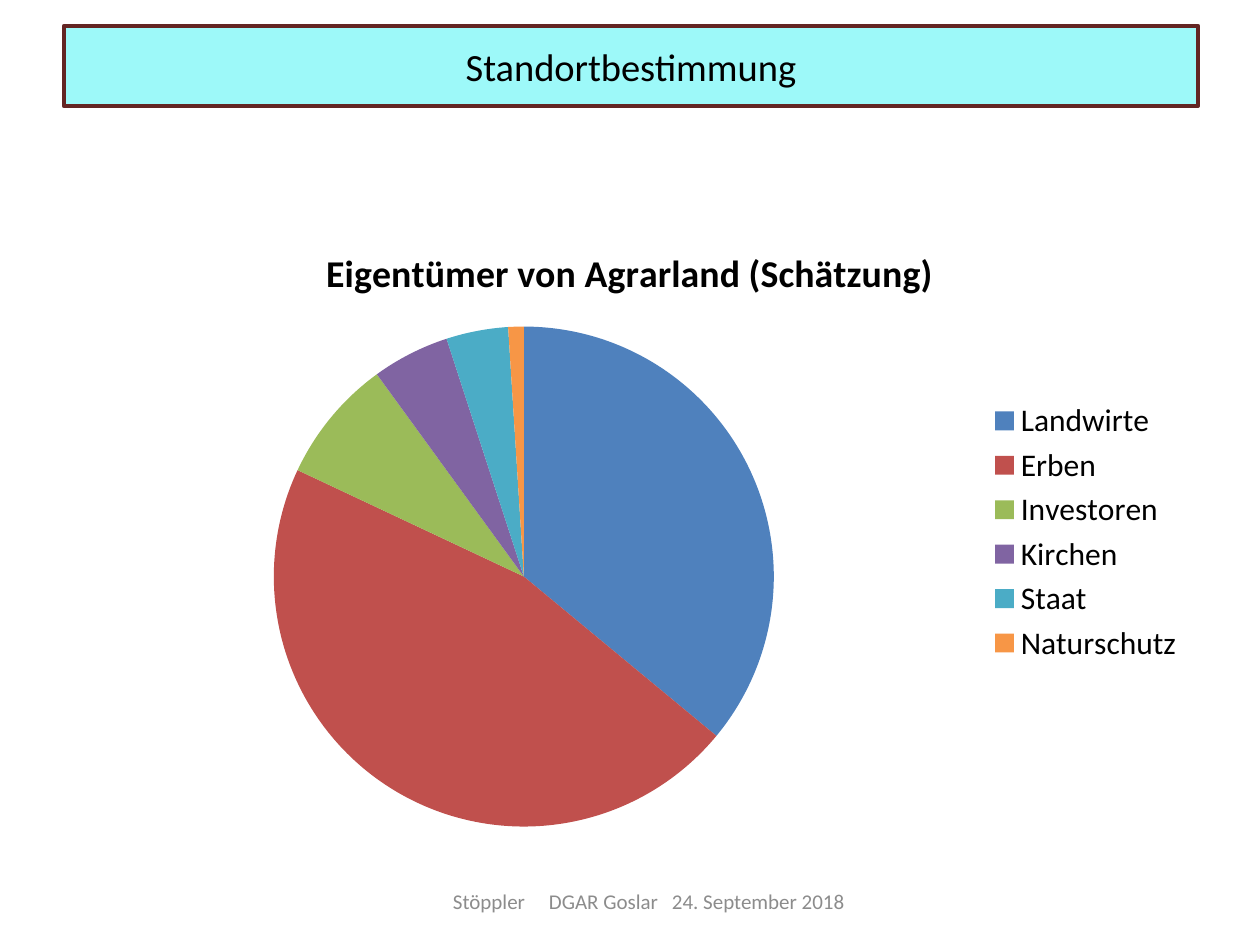
import pptx
import pptx.util
import pptx.chart.data
import pptx.dml.color
import pptx.enum.chart
import pptx.enum.text
import pptx.oxml
import pptx.oxml.ns

PX = 914400 // 126
FONT = "Calibri"
COLORS = {
    "title_fill": "9DF9F9", "title_line": "632523", "text": "000000", "footer": "8C8C8C",
    "Landwirte": "4F81BD", "Erben": "C0504D", "Investoren": "9BBB59",
    "Kirchen": "8064A2", "Staat": "4BACC6", "Naturschutz": "F79646",
}
OWNERS = {"Landwirte": 36, "Erben": 46, "Investoren": 8,
          "Kirchen": 5, "Staat": 4, "Naturschutz": 1}
CHART_TITLE = "Eigentümer von Agrarland (Schätzung)"


def box(*lengths):
    return [n * PX for n in lengths]


def style(font, size, color, bold=False):
    font.name = FONT
    font.size = pptx.util.Pt(size)
    font.bold = bold
    font.color.rgb = pptx.dml.color.RGBColor.from_string(COLORS[color])


prs = pptx.Presentation()
prs.slide_width, prs.slide_height = box(1260, 945)
s = prs.slides.add_slide(prs.slide_layouts[5])

data = pptx.chart.data.CategoryChartData()
data.categories = list(OWNERS)
data.add_series(CHART_TITLE, list(OWNERS.values()))
chart = s.shapes.add_chart(pptx.enum.chart.XL_CHART_TYPE.PIE,
                           *box(63, 220, 1134, 624), data).chart
style(chart.font, 18, "text")
chart.has_title = True
tf = chart.chart_title.text_frame
tf.text = CHART_TITLE
style(tf.paragraphs[0].font, 21.6, "text", True)
chart.has_legend = True
chart.legend.position = pptx.enum.chart.XL_LEGEND_POSITION.RIGHT
chart.legend.include_in_layout = False
plot = chart.plots[0]
plot.vary_by_categories = True
for i, owner in enumerate(OWNERS):
    fill = plot.series[0].points[i].format.fill
    fill.solid()
    fill.fore_color.rgb = pptx.dml.color.RGBColor.from_string(COLORS[owner])

footer = s.shapes.add_textbox(*box(431, 876, 437, 50))
tf = footer.text_frame
tf.word_wrap = True
tf.vertical_anchor = pptx.enum.text.MSO_ANCHOR.MIDDLE
tf.margin_left, tf.margin_right = box(22, 0)
p = tf.paragraphs[0]
r = p.add_run()
r.text = "Stöppler\tDGAR Goslar\t24. September 2018"
style(p.font, 12, "footer")
tabs = pptx.oxml.parse_xml(f'<a:tabLst {pptx.oxml.ns.nsdecls("a")}>'
                           + "".join(f'<a:tab pos="{n * PX}" algn="l"/>' for n in (96, 219))
                           + "</a:tabLst>")
p.font._element.getparent().insert(0, tabs)

title = s.shapes.title
title.left, title.top, title.width, title.height = box(64, 26, 1134, 80)
title.fill.solid()
title.fill.fore_color.rgb = pptx.dml.color.RGBColor.from_string(COLORS["title_fill"])
title.line.color.rgb = pptx.dml.color.RGBColor.from_string(COLORS["title_line"])
title.line.width = pptx.util.Pt(2.5)
tf = title.text_frame
tf.text = "Standortbestimmung"
tf.vertical_anchor = pptx.enum.text.MSO_ANCHOR.MIDDLE
p = tf.paragraphs[0]
p.alignment = pptx.enum.text.PP_ALIGN.CENTER
style(p.font, 22, "text")
s.shapes._spTree.append(title._element)

prs.save("out.pptx")
